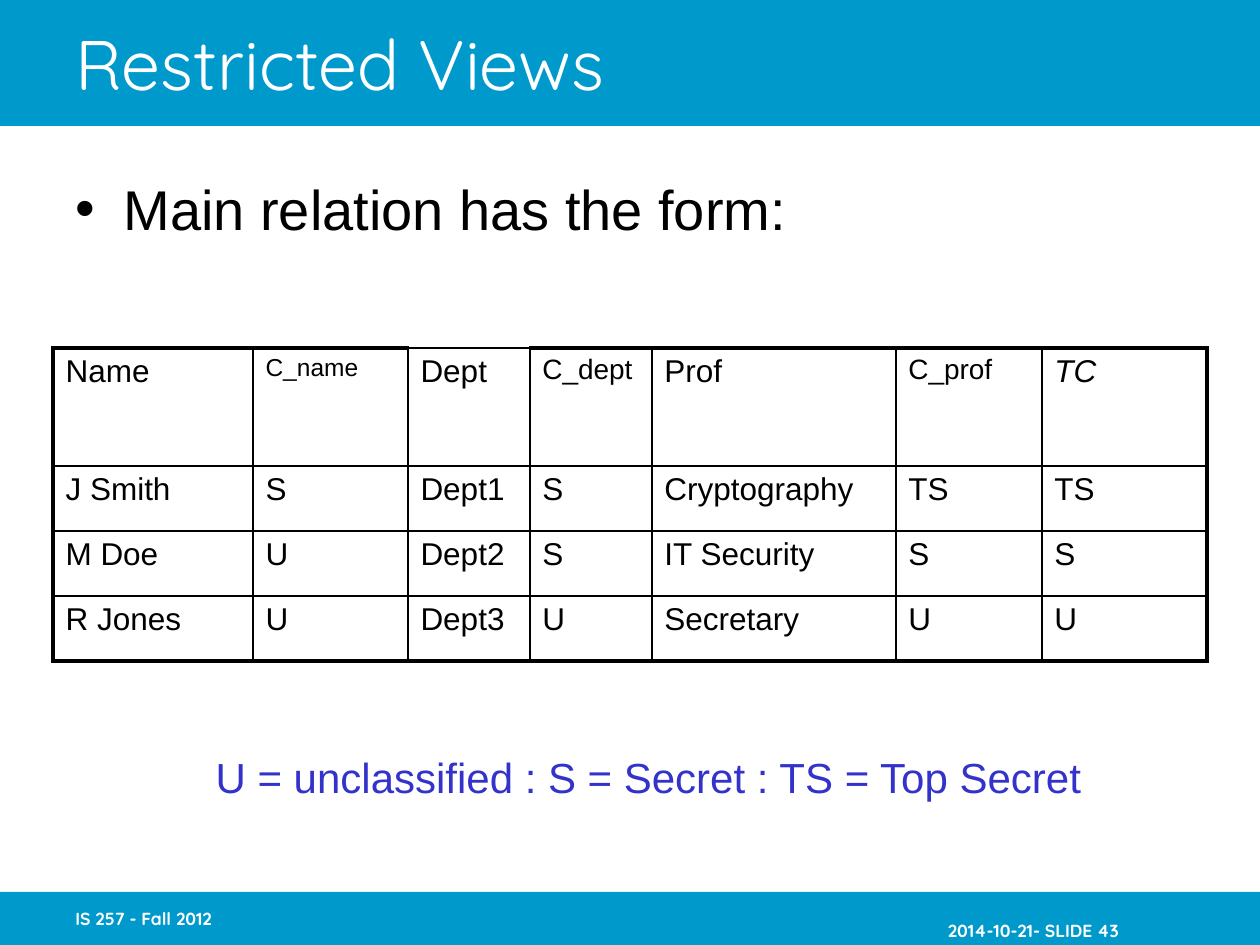
from lxml.etree import SubElement
from pptx import Presentation
from pptx.dml.color import RGBColor
from pptx.enum.shapes import MSO_SHAPE as Shape
from pptx.enum.text import MSO_ANCHOR as Anchor, PP_ALIGN as Align
from pptx.oxml import parse_xml
from pptx.oxml.ns import nsdecls, qn
from pptx.util import Emu, Pt

BLUE = RGBColor(0x00, 0x99, 0xCC)
INDIGO = RGBColor(0x33, 0x33, 0xCC)
WHITE = RGBColor(0xFF, 0xFF, 0xFF)
BLACK = RGBColor(0x00, 0x00, 0x00)


def px(length):
    return Emu(round(length * 914400 / 126))


def write(frame, text, size=18, font="Arial", color=BLACK, bold=False, italic=False,
          align=Align.LEFT, anchor=Anchor.MIDDLE, wrap=True, hang=0):
    frame.word_wrap = wrap
    frame.vertical_anchor = anchor
    paragraph = frame.paragraphs[0]
    paragraph.alignment = align
    if hang:
        properties = paragraph._p.get_or_add_pPr()
        properties.set("marL", str(px(hang)))
        properties.set("indent", str(-px(hang)))
        SubElement(properties, qn("a:buFont"), typeface="Arial")
        SubElement(properties, qn("a:buChar"), char="•")
    run = paragraph.add_run()
    run.text = text
    run.font.name = font
    run.font.size = Pt(size)
    run.font.bold = bold
    run.font.italic = italic
    run.font.color.rgb = color


deck = Presentation()
deck.slide_width, deck.slide_height = px(1260), px(945)
slide = deck.slides.add_slide(deck.slide_layouts[6])
shapes = slide.shapes

for top, height in [(0, 126), (892, 53)]:
    band = shapes.add_shape(Shape.RECTANGLE, 0, px(top), px(1260), px(height))
    band.shadow.inherit = False
    band.fill.solid()
    band.fill.fore_color.rgb = BLUE
    band.line.fill.background()

footer = dict(size=10, font="Quicksand", color=WHITE, bold=True)
texts = [
    ((63, 0, 1071, 126), "Restricted Views", dict(size=40, font="Quicksand", color=WHITE)),
    ((63, 168, 1134, 120), "Main relation has the form:",
     dict(size=32, anchor=Anchor.TOP, hang=48)),
    ((200, 745, 897, 63), "U = unclassified : S = Secret : TS = Top Secret",
     dict(size=24, color=INDIGO, align=Align.CENTER, wrap=False)),
    ((63, 892, 262, 53), "IS 257 - Fall 2012", footer),
    ((869, 915, 262, 30), "2014-10-21- SLIDE 43", dict(footer, align=Align.RIGHT)),
]
for box, text, style in texts:
    write(shapes.add_textbox(*map(px, box)).text_frame, text, **style)

relation = [
    ["Name", "C_name", "Dept", "C_dept", "Prof", "C_prof", "TC"],
    ["J Smith", "S", "Dept1", "S", "Cryptography", "TS", "TS"],
    ["M Doe", "U", "Dept2", "S", "IT Security", "S", "S"],
    ["R Jones", "U", "Dept3", "U", "Secretary", "U", "U"],
]
widths = [200, 155, 122, 122, 244, 146, 165]
heights = [118, 65, 65, 65]
heading_styles = {"C_name": dict(size=14), "C_dept": dict(size=16),
                  "C_prof": dict(size=16), "TC": dict(italic=True)}
last_row, last_column = len(heights) - 1, len(widths) - 1

table = shapes.add_table(len(heights), len(widths), px(53), px(348),
                         px(sum(widths)), px(sum(heights))).table
table.first_row = table.horz_banding = False
for column, width in zip(table.columns, widths):
    column.width = px(width)
for row, height in zip(table.rows, heights):
    row.height = px(height)

for r, record in enumerate(relation):
    for c, value in enumerate(record):
        cell = table.cell(r, c)
        write(cell.text_frame, value, anchor=Anchor.TOP, **heading_styles.get(value, {}))
        cell.fill.background()
        outer_sides = {
            "lnL": c == 0,
            "lnR": c == last_column,
            "lnT": r == 0 and value != "Dept",
            "lnB": r == last_row,
        }
        for position, (side, outer) in enumerate(outer_sides.items()):
            border = parse_xml(
                f'<a:{side} {nsdecls("a")} w="{Pt(2.25 if outer else 1)}">'
                f'<a:solidFill><a:srgbClr val="{BLACK}"/></a:solidFill></a:{side}>')
            cell._tc.get_or_add_tcPr().insert(position, border)

deck.save("out.pptx")
